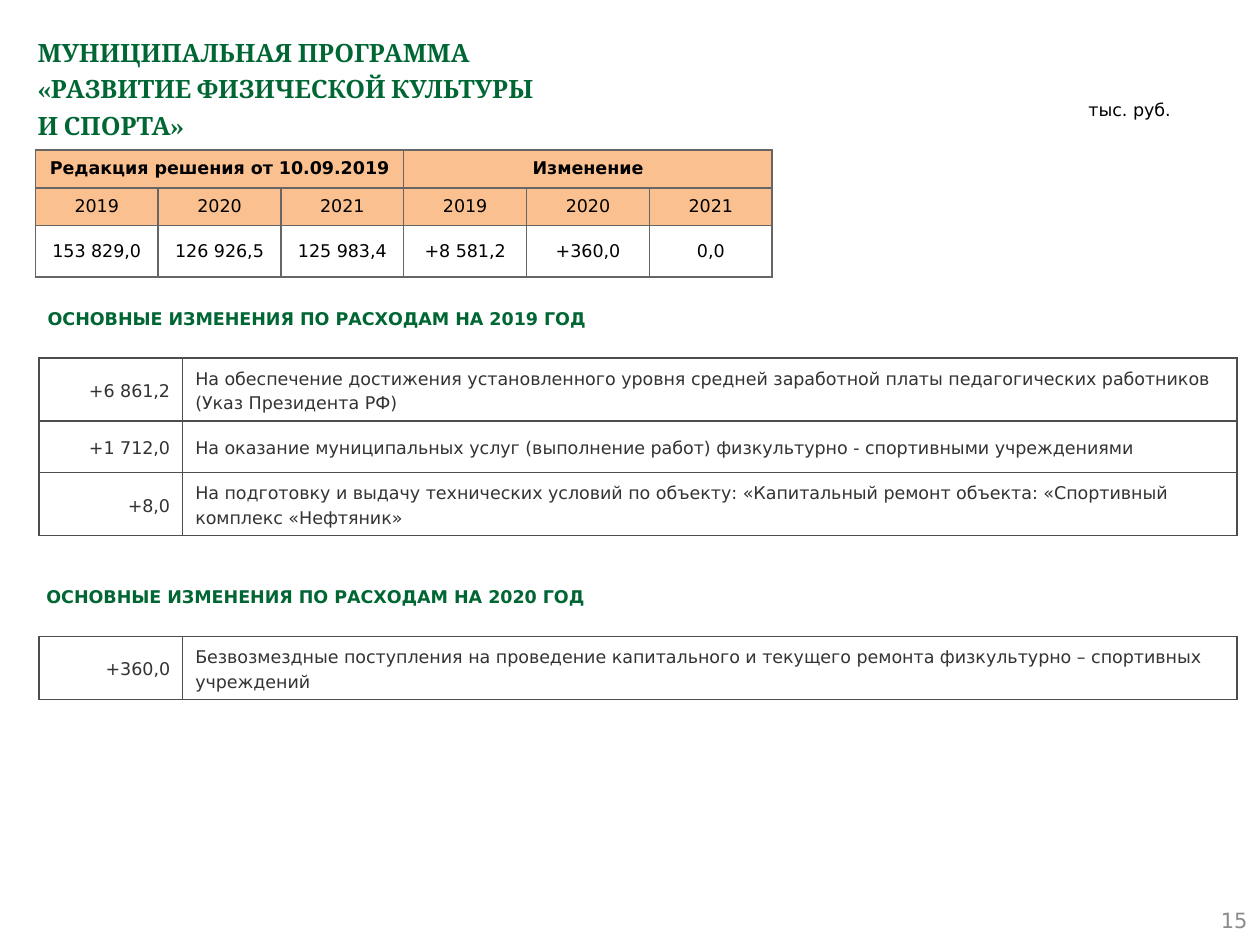
from copy import deepcopy
from lxml.etree import SubElement
from pptx import Presentation
from pptx.dml.color import RGBColor
from pptx.enum.shapes import MSO_SHAPE as Shape
from pptx.enum.text import MSO_ANCHOR as Anchor, PP_ALIGN as Align
from pptx.oxml.ns import qn
from pptx.util import Inches, Pt

COLORS = {
    "green": "006633",
    "orange": "FAC090",
    "black": "000000",
    "dark": "333333",
    "page": "8C8C8C",
    "summary_line": "666666",
    "change_line": "4D4D4D",
}


def write(frame, text, size=10, font="DejaVu Sans", color="black", bold=False,
          align=Align.LEFT, spacing=1.0):
    frame.word_wrap = True
    para = frame.paragraphs[0]
    para.text = text
    para.alignment = align
    para.line_spacing = spacing
    for span in para.runs:
        span.font.size = Pt(size)
        span.font.name = font
        span.font.bold = bold
        span.font.color.rgb = RGBColor.from_string(COLORS[color])
    for line_break in para._p.findall(qn("a:br")):
        line_break.insert(0, deepcopy(para.runs[0]._r.rPr))


def add_grid(page, left, top, widths, heights, line):
    frame = page.shapes.add_table(len(heights), len(widths), Inches(left), Inches(top),
                                  Inches(sum(widths)), Inches(sum(heights)))
    table = frame.table
    table.first_row = False
    table.horz_banding = False
    for column, width in zip(table.columns, widths):
        column.width = Inches(width)
    for row, height in zip(table.rows, heights):
        row.height = Inches(height)
    for cell in table.iter_cells():
        cell.vertical_anchor = Anchor.MIDDLE
        properties = cell._tc.get_or_add_tcPr()
        for side in ("a:lnL", "a:lnR", "a:lnT", "a:lnB"):
            border = SubElement(properties, qn(side), w=str(Pt(1)))
            fill = SubElement(border, qn("a:solidFill"))
            SubElement(fill, qn("a:srgbClr"), val=COLORS[line])
        cell.fill.background()
    return table


deck = Presentation()
deck.slide_width = Inches(10)
deck.slide_height = Inches(7.5)
page = deck.slides.add_slide(deck.slide_layouts[6])

title = page.shapes.add_textbox(Inches(0.2), Inches(0.2), Inches(9.61), Inches(0.79))
write(title.text_frame,
      "МУНИЦИПАЛЬНАЯ ПРОГРАММА \n«РАЗВИТИЕ ФИЗИЧЕСКОЙ КУЛЬТУРЫ \nИ СПОРТА»",
      size=14.4, font="Cambria", color="green", bold=True, spacing=1.2)

number = page.shapes.add_textbox(Inches(7.67), Inches(7.1), Inches(2.33), Inches(0.4))
number.text_frame.vertical_anchor = Anchor.MIDDLE
write(number.text_frame, "15", size=12, color="page", align=Align.RIGHT)

unit = page.shapes.add_textbox(Inches(8.54), Inches(0.7), Inches(1.01), Inches(0.3))
write(unit.text_frame, "тыс. руб.", spacing=1.2)

summary_rows = [
    ["Редакция решения от 10.09.2019", "", "", "Изменение", "", ""],
    ["2019", "2020", "2021"] * 2,
    ["153 829,0", "126 926,5", "125 983,4", "+8 581,2", "+360,0", "0,0"],
]
summary = add_grid(page, 0.28, 1.19, [0.975] * 6, [0.3, 0.3, 0.41], "summary_line")
for first in (0, 3):
    summary.cell(0, first).merge(summary.cell(0, first + 2))
for row, texts in enumerate(summary_rows):
    for column, text in enumerate(texts):
        cell = summary.cell(row, column)
        cell.margin_left = cell.margin_right = Inches(0.05)
        cell.margin_top = cell.margin_bottom = Inches(0.05)
        if row < 2:
            cell.fill.solid()
            cell.fill.fore_color.rgb = RGBColor.from_string(COLORS["orange"])
        if text:
            write(cell.text_frame, text, bold=row == 0, align=Align.CENTER)

sections = [
    ("2019", 0.28, 2.31, [0.49, 0.41, 0.49], [
        ("+6 861,2", "На обеспечение достижения установленного уровня средней "
                     "заработной платы педагогических работников (Указ Президента РФ)"),
        ("+1 712,0", "На оказание муниципальных услуг (выполнение работ) "
                     "физкультурно - спортивными учреждениями"),
        ("+8,0", "На подготовку и выдачу технических условий по объекту: "
                 "«Капитальный ремонт объекта: «Спортивный комплекс «Нефтяник»"),
    ]),
    ("2020", 0.27, 4.52, [0.5], [
        ("+360,0", "Безвозмездные поступления на проведение капитального и текущего "
                   "ремонта физкультурно – спортивных учреждений"),
    ]),
]
for year, left, top, heights, changes in sections:
    heading = page.shapes.add_shape(Shape.PENTAGON, Inches(left), Inches(top),
                                    Inches(4.92), Inches(0.43))
    heading.adjustments[0] = 0
    heading.shadow.inherit = False
    heading.fill.background()
    heading.line.fill.background()
    heading.text_frame.vertical_anchor = Anchor.MIDDLE
    write(heading.text_frame, f"ОСНОВНЫЕ ИЗМЕНЕНИЯ ПО РАСХОДАМ НА {year} ГОД",
          color="green", bold=True)
    table = add_grid(page, 0.31, top + 0.53, [1.14, 8.37], heights, "change_line")
    for row, (amount, purpose) in enumerate(changes):
        write(table.cell(row, 0).text_frame, amount, color="dark",
              align=Align.RIGHT, spacing=1.2)
        write(table.cell(row, 1).text_frame, purpose, color="dark", spacing=1.2)

deck.save("out.pptx")
